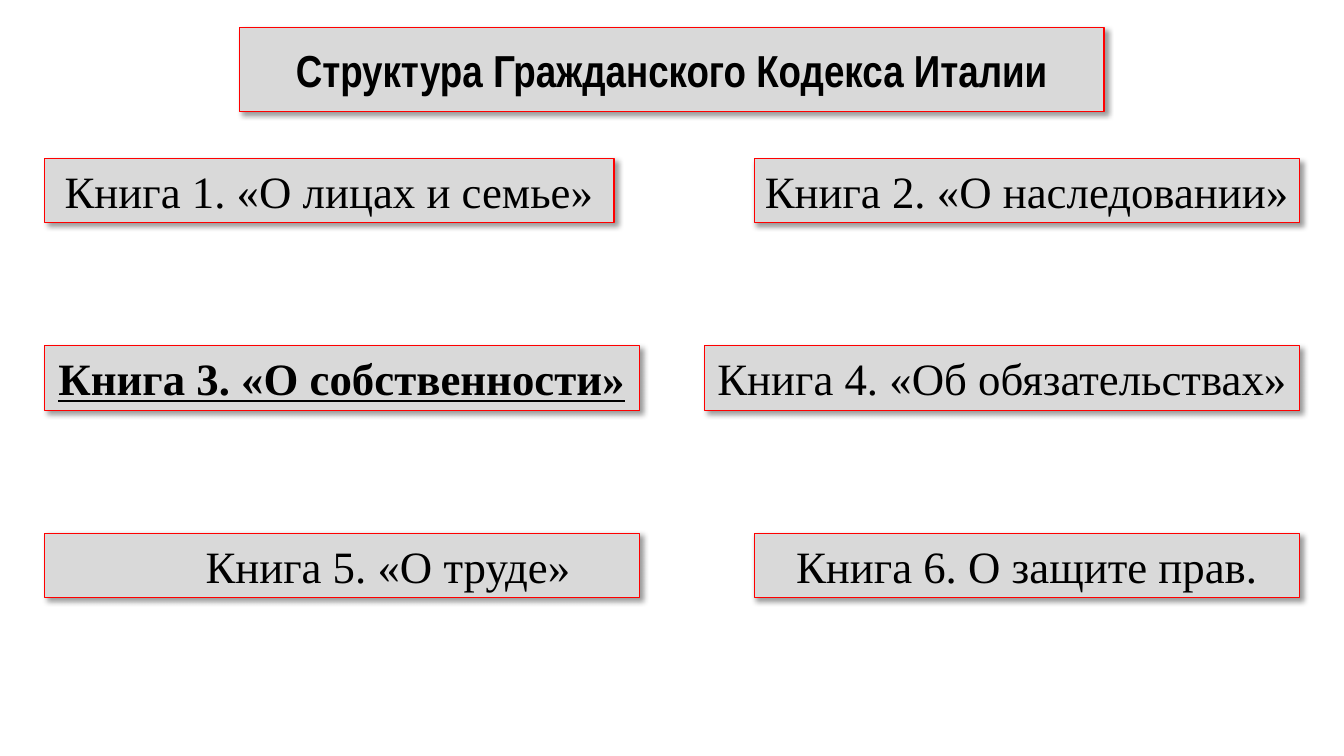
from lxml import etree
from pptx import Presentation
from pptx.dml.color import RGBColor
from pptx.enum.shapes import MSO_SHAPE
from pptx.enum.text import MSO_ANCHOR, MSO_AUTO_SIZE, PP_ALIGN
from pptx.oxml.ns import qn
from pptx.util import Inches, Pt

RECTANGLE = MSO_SHAPE.RECTANGLE
MIDDLE = MSO_ANCHOR.MIDDLE
GROW = MSO_AUTO_SIZE.SHAPE_TO_FIT_TEXT
CENTER, LEFT = PP_ALIGN.CENTER, PP_ALIGN.LEFT

BOX_HEIGHT = 0.64
LEFT_EDGE, RIGHT_EDGE = 0.44, 12.89
FIRST_ROW, ROW_STEP = 1.57, 1.86
LABOUR_INDENT = 1.5

BOOK_ROWS = [
    (("Книга 1. «О лицах и семье»", 5.65, {}),
     ("Книга 2. «О наследовании»", 5.41, {})),
    (("Книга 3. «О собственности»", 5.9, {"bold": True, "underline": True}),
     ("Книга 4. «Об обязательствах»", 5.9, {})),
    (("Книга 5. «О труде»", 5.9, {"indent": LABOUR_INDENT}),
     ("Книга 6. О защите прав.", 5.41, {})),
]


def color(hex_code):
    """Turn a hex string into a colour."""
    return RGBColor.from_string(hex_code)


class CodeSlide:
    """Holds the style and the current slide."""

    fill, border, ink = "D9D9D9", "FF0000", "000000"
    title_font, book_font, size = "Arial Narrow", "Times New Roman", 32

    def __init__(self, deck):
        """Add a title-only slide to the deck."""
        self.slide = deck.slides.add_slide(deck.slide_layouts[5])

    def shadow(self, box):
        """Give a box a soft shadow towards the lower right."""
        box.shadow.inherit = False
        effects = box._element.spPr.find(qn("a:effectLst"))
        outer = etree.SubElement(
            effects, qn("a:outerShdw"), blurRad=str(Pt(4)), dist=str(Pt(3)),
            dir="2700000", algn="tl", rotWithShape="0")
        tint = etree.SubElement(outer, qn("a:srgbClr"), val=self.ink)
        etree.SubElement(tint, qn("a:alpha"), val="40000")

    def panel(self, box, text, font, bold=False, underline=False, indent=0):
        """Style a box and write its text."""
        box.fill.solid()
        box.fill.fore_color.rgb = color(self.fill)
        box.line.color.rgb = color(self.border)
        box.line.width = Pt(0.75)
        self.shadow(box)
        frame = box.text_frame
        frame.word_wrap = True
        frame.auto_size = GROW
        frame.vertical_anchor = MIDDLE
        paragraph = frame.paragraphs[0]
        paragraph.alignment = LEFT if indent else CENTER
        if indent:
            paragraph.level = 3
            paragraph._p.get_or_add_pPr().set("marL", str(Inches(indent)))
        run = paragraph.add_run()
        run.text = text
        run.font.name = font
        run.font.size = Pt(self.size)
        run.font.bold = bold
        run.font.underline = underline
        run.font.color.rgb = color(self.ink)

    def title(self, text, left, top, width):
        """Place and fill the title placeholder."""
        heading = self.slide.shapes.title
        heading.left, heading.top = Inches(left), Inches(top)
        heading.width, heading.height = Inches(width), Inches(BOX_HEIGHT)
        self.panel(heading, text, self.title_font, bold=True)

    def book(self, text, left, top, width, **style):
        """Add the box of one book of the code."""
        box = self.slide.shapes.add_shape(
            RECTANGLE, Inches(left), Inches(top), Inches(width), Inches(BOX_HEIGHT))
        self.panel(box, text, self.book_font, **style)


def main():
    """Build and save the slide."""
    deck = Presentation()
    deck.slide_width, deck.slide_height = Inches(13.33), Inches(7.5)
    page = CodeSlide(deck)
    page.title("Структура Гражданского Кодекса Италии", 2.38, 0.37, 8.57)
    for row, (left_book, right_book) in enumerate(BOOK_ROWS):
        top = FIRST_ROW + row * ROW_STEP
        text, width, style = left_book
        page.book(text, LEFT_EDGE, top, width, **style)
        text, width, style = right_book
        page.book(text, RIGHT_EDGE - width, top, width, **style)
    deck.save("out.pptx")


if __name__ == "__main__":
    main()
